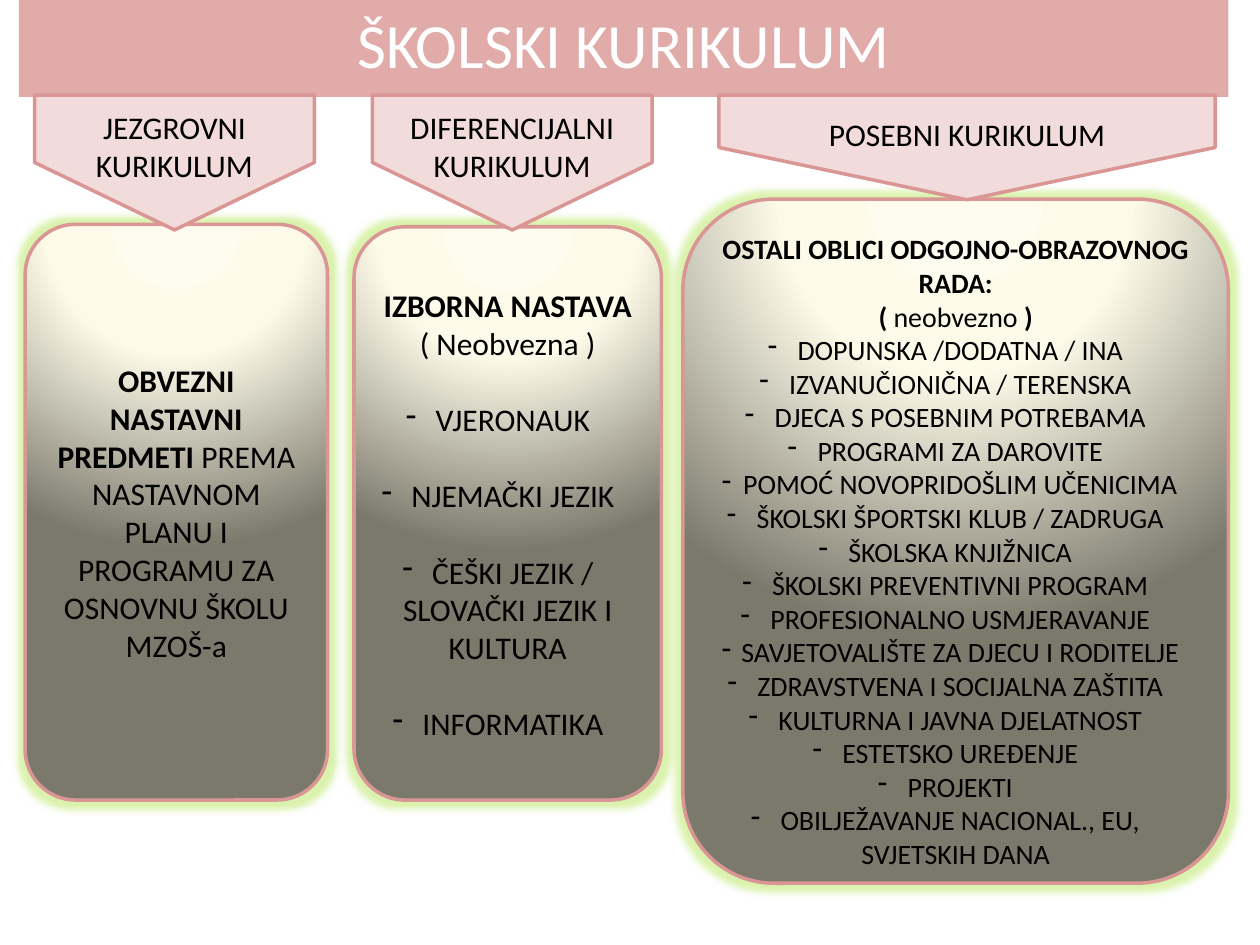
from lxml import etree
from pptx import Presentation
from pptx.dml.color import RGBColor
from pptx.enum.shapes import MSO_SHAPE
from pptx.enum.text import MSO_ANCHOR, PP_ALIGN
from pptx.oxml import parse_xml
from pptx.oxml.ns import qn
from pptx.util import Inches, Pt

RECT, CARD, TAB = MSO_SHAPE.RECTANGLE, MSO_SHAPE.ROUNDED_RECTANGLE, MSO_SHAPE.PENTAGON
CENTER = PP_ALIGN.CENTER
TOP, MIDDLE = MSO_ANCHOR.TOP, MSO_ANCHOR.MIDDLE
NAMESPACE = 'xmlns:a="http://schemas.openxmlformats.org/drawingml/2006/main"'
FONT = "Calibri"
COLORS = {
    "rose": "D99694", "blush": "F2DCDB", "glow": "A4E032",
    "cream": "FEFCEE", "ivory": "FDFAEA", "olive": "7B796B",
    "text": "000000", "title": "FFFFFF",
}
CARD_STOPS = [(0, "cream"), (40, "ivory"), (100, "olive")]
SLIDE_W, SLIDE_H = Inches(10), Inches(7.5)
TAB_TOP = 10.07


def bullets(*items, gap=0):
    return [([(item, False)], True, gap) for item in items]


# Boxes are (left, top, width, height) in percent of the slide.
# Paragraphs are (runs, bulleted, space before); runs are (text, bold).
COLUMNS = [
    {
        "heading": "JEZGROVNI KURIKULUM",
        "tab": (2.75, TAB_TOP, 22.2, 14.27),
        "card": (2, 23.73, 24, 60.93),
        "size": 18, "anchor": MIDDLE, "top_inset": 0.05,
        "content": [
            ([("OBVEZNI NASTAVNI PREDMETI ", True),
              ("PREMA NASTAVNOM PLANU I PROGRAMU ZA OSNOVNU ŠKOLU", False)], False, 0),
            ([("MZOŠ-a", False)], False, 0),
        ],
    },
    {
        "heading": "DIFERENCIJALNI KURIKULUM",
        "tab": (29.55, TAB_TOP, 22.2, 14.27),
        "card": (28.1, 24, 24.4, 60.67),
        "size": 18, "anchor": TOP, "top_inset": 0.35,
        "content": [
            ([("IZBORNA NASTAVA", True)], False, 0),
            ([("( Neobvezna )", False)], False, 0),
        ] + bullets(
            "VJERONAUK", "NJEMAČKI JEZIK",
            "ČEŠKI JEZIK / SLOVAČKI JEZIK I KULTURA", "INFORMATIKA", gap=22),
    },
    {
        "heading": "POSEBNI KURIKULUM",
        "tab": (57.05, TAB_TOP, 39.4, 11.07),
        "card": (54.2, 21.07, 43.3, 72.4),
        "size": 16, "anchor": TOP, "top_inset": 0.05,
        "content": [
            ([("OSTALI OBLICI ODGOJNO-OBRAZOVNOG RADA:", True)], False, 0),
            ([("( ", True), ("neobvezno ", False), (")", True)], False, 0),
        ] + bullets(
            "DOPUNSKA /DODATNA / INA", "IZVANUČIONIČNA / TERENSKA",
            "DJECA S POSEBNIM POTREBAMA", "PROGRAMI ZA DAROVITE",
            "POMOĆ NOVOPRIDOŠLIM UČENICIMA", "ŠKOLSKI ŠPORTSKI KLUB / ZADRUGA",
            "ŠKOLSKA KNJIŽNICA", "ŠKOLSKI PREVENTIVNI PROGRAM",
            "PROFESIONALNO USMJERAVANJE", "SAVJETOVALIŠTE ZA DJECU I RODITELJE",
            "ZDRAVSTVENA I SOCIJALNA ZAŠTITA", "KULTURNA I JAVNA DJELATNOST",
            "ESTETSKO UREĐENJE", "PROJEKTI",
            "OBILJEŽAVANJE NACIONAL., EU, SVJETSKIH DANA"),
    },
]


def rgb(name):
    return RGBColor.from_string(COLORS[name])


def add_box(slide, kind, box, fill=None, outline=None):
    left, top, width, height = box
    shape = slide.shapes.add_shape(
        kind, int(SLIDE_W * left / 100), int(SLIDE_H * top / 100),
        int(SLIDE_W * width / 100), int(SLIDE_H * height / 100))
    shape.shadow.inherit = False
    if fill:
        shape.fill.solid()
        shape.fill.fore_color.rgb = rgb(fill)
    if outline:
        shape.line.color.rgb = rgb(outline)
        shape.line.width = Pt(2)
    else:
        shape.line.fill.background()
    shape.text_frame.word_wrap = True
    shape.text_frame.vertical_anchor = MIDDLE
    return shape


def format_paragraph(paragraph, size, color="text"):
    paragraph.alignment = CENTER
    for run in paragraph.runs:
        run.font.name = FONT
        run.font.size = Pt(size)
        run.font.color.rgb = rgb(color)


def add_title(slide, box):
    banner = add_box(slide, RECT, box, "rose")
    tint = banner.fill._xPr.find(".//" + qn("a:srgbClr"))
    etree.SubElement(tint, qn("a:alpha")).set("val", "80000")
    banner.text_frame.text = "ŠKOLSKI KURIKULUM"
    heading = banner.text_frame.paragraphs[0]
    heading.line_spacing = 0.9
    format_paragraph(heading, 36, "title")


def style_card(card):
    """Radial gradient lit from above, with a soft green glow."""
    stops = "".join(
        f'<a:gs pos="{share * 1000}"><a:srgbClr val="{COLORS[name]}"/></a:gs>'
        for share, name in CARD_STOPS)
    gradient = parse_xml(
        f'<a:gradFill {NAMESPACE} rotWithShape="1"><a:gsLst>{stops}</a:gsLst>'
        '<a:path path="circle"><a:fillToRect l="50000" t="-80000" r="50000" b="180000"/>'
        '</a:path></a:gradFill>')
    properties = card._element.spPr
    properties.find(qn("a:prstGeom")).addnext(gradient)
    properties.find(qn("a:effectLst")).append(parse_xml(
        f'<a:glow {NAMESPACE} rad="101600"><a:srgbClr val="{COLORS["glow"]}">'
        '<a:alpha val="40000"/></a:srgbClr></a:glow>'))


def add_card(slide, box, column):
    card = add_box(slide, CARD, box, outline="rose")
    style_card(card)
    frame = card.text_frame
    frame.vertical_anchor = column["anchor"]
    frame.margin_top = Inches(column["top_inset"])
    for index, (runs, bulleted, gap) in enumerate(column["content"]):
        paragraph = frame.add_paragraph() if index else frame.paragraphs[0]
        for text, bold in runs:
            run = paragraph.add_run()
            run.text = text
            run.font.bold = bold
        format_paragraph(paragraph, column["size"])
        if gap:
            paragraph.space_before = Pt(gap)
        if bulleted:
            etree.SubElement(paragraph._p.get_or_add_pPr(), qn("a:buChar")).set("char", "-")


def add_tab(slide, box, heading):
    """Pentagon turned to point down, its text kept upright."""
    tab = add_box(slide, TAB, box, "blush", "rose")
    across, down = tab.width, tab.height
    tab.left += (across - down) // 2
    tab.top += (down - across) // 2
    tab.width, tab.height = down, across
    tab.rotation = 90
    tab.text_frame._txBody.bodyPr.set("vert", "vert270")
    tab.text_frame.text = heading
    format_paragraph(tab.text_frame.paragraphs[0], 18)


def main():
    deck = Presentation()
    deck.slide_width, deck.slide_height = SLIDE_W, SLIDE_H
    slide = deck.slides.add_slide(deck.slide_layouts[6])
    add_title(slide, (1.5, 0, 96, 10.27))
    for column in COLUMNS:
        add_card(slide, column["card"], column)
    for column in COLUMNS:
        add_tab(slide, column["tab"], column["heading"])
    deck.save("out.pptx")


if __name__ == "__main__":
    main()
